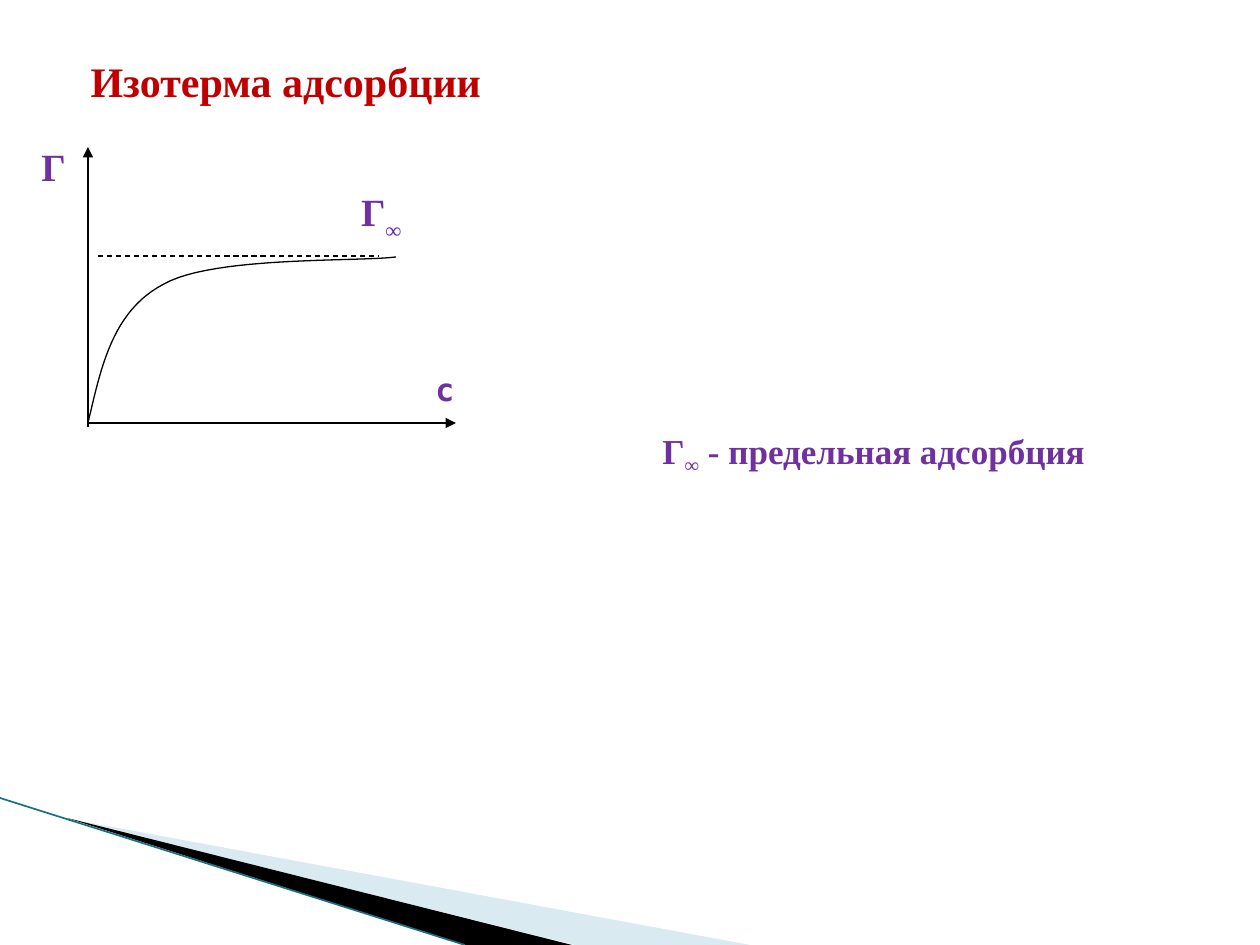
"""Build a slide showing an adsorption isotherm and its limiting value."""
import pptx
import pptx.dml.color
import pptx.enum.dml
import pptx.enum.shapes
import pptx.enum.text
import pptx.oxml.ns
import pptx.util
from lxml import etree

THEME = {
    "title": "C00000", "label": "7030A0", "ink": "000000",
    "pale": "A0CBDC", "edge": "1A6F80",
    "serif": "Times New Roman", "mono": "DejaVu Sans Mono",
    "title_pt": 24, "axis_pt": 22, "legend_pt": 20, "c_pt": 18,
    "line_pt": 0.75, "edge_pt": 0.95,
}
SLIDE = (1260, 945)
TITLE = ("Изотерма адсорбции", (78, 49, 420, 63))
LABELS = [
    ([("Г", 0), ("∞ ", -30)], (335, 186, 98, 59),
     dict(size="axis_pt", align="CENTER", anchor="MIDDLE", wrap=True)),
    ([("Г", 0)], (29, 137, 50, 59), dict(size="axis_pt", anchor="MIDDLE")),
    ([("с", 0)], (423, 364, 52, 50), dict(size="c_pt", font="mono")),
    ([("Г", 0), ("∞", -25), (" - предельная адсорбция", 0)],
     (650, 423, 457, 55), dict(size="legend_pt")),
]
WEDGES = [
    ([(69, 819), (750, 945), (575, 945)], "pale", 40),
    ([(67, 818), (572, 945), (465, 945)], "ink", 100),
]
EDGE = (0, 798, 465, 945)
AXES = [(88, 427, 88, 147), (88, 423, 456, 423)]
LIMIT = (98, 256, 379, 256)
CURVE = [
    [(88, 423), (101, 368), (112, 311), (164, 284)],
    [(164, 284), (214, 256), (357, 262), (396, 257)],
]
STEPS = 24


def px(n):
    return round(n * 914400 / 126)


def rgb(name):
    return pptx.dml.color.RGBColor.from_string(THEME[name])


def add_xml(parent, tag, **attrs):
    return etree.SubElement(parent, pptx.oxml.ns.qn(tag), attrs)


def place(sp, box):
    sp.left, sp.top, sp.width, sp.height = map(px, box)


def write(sp, runs, size, color="label", font="serif", align="LEFT", anchor="TOP", wrap=False):
    tf = sp.text_frame
    tf.word_wrap = wrap
    tf.auto_size = pptx.enum.text.MSO_AUTO_SIZE.NONE
    tf.vertical_anchor = getattr(pptx.enum.text.MSO_ANCHOR, anchor)
    p = tf.paragraphs[0]
    p.alignment = getattr(pptx.enum.text.PP_ALIGN, align)
    for text, baseline in runs:
        r = p.add_run()
        r.text = text
        r.font.name = THEME[font]
        r.font.size = pptx.util.Pt(THEME[size])
        r.font.bold = True
        r.font.color.rgb = rgb(color)
        if baseline:
            r.font._element.set("baseline", str(baseline * 1000))


def add_line(s, ends, color="ink", width="line_pt", arrow=False, dash=False):
    line = s.shapes.add_connector(pptx.enum.shapes.MSO_CONNECTOR.STRAIGHT, *map(px, ends))
    line.line.color.rgb = rgb(color)
    line.line.width = pptx.util.Pt(THEME[width])
    if dash:
        line.line.dash_style = pptx.enum.dml.MSO_LINE.DASH
    if arrow:
        add_xml(line.line._get_or_add_ln(), "a:tailEnd", type="triangle")
    add_xml(line._element.spPr, "a:effectLst")


def add_outline(s, points, close):
    start, *rest = [(px(x), px(y)) for x, y in points]
    builder = s.shapes.build_freeform(*start)
    builder.add_line_segments(rest, close=close)
    sp = builder.convert_to_shape()
    sp.shadow.inherit = False
    return sp


def add_wedge(s, points, color, opacity):
    sp = add_outline(s, points, True)
    sp.fill.solid()
    sp.fill.fore_color.rgb = rgb(color)
    sp.line.fill.background()
    if opacity < 100:
        clr = sp._element.spPr.find(".//" + pptx.oxml.ns.qn("a:srgbClr"))
        add_xml(clr, "a:alpha", val=str(opacity * 1000))


def bezier(controls, t):
    weights = ((1 - t) ** 3, 3 * t * (1 - t) ** 2, 3 * t * t * (1 - t), t ** 3)
    return tuple(sum(w * c for w, c in zip(weights, axis)) for axis in zip(*controls))


def add_curve(s):
    points = [CURVE[0][0]]
    points += [bezier(part, i / STEPS) for part in CURVE for i in range(1, STEPS + 1)]
    sp = add_outline(s, points, False)
    sp.fill.background()
    sp.line.color.rgb = rgb("ink")
    sp.line.width = pptx.util.Pt(THEME["line_pt"])


def main():
    prs = pptx.Presentation()
    prs.slide_width, prs.slide_height = map(px, SLIDE)
    s = prs.slides.add_slide(prs.slide_layouts[5])
    for wedge in WEDGES:
        add_wedge(s, *wedge)
    add_line(s, EDGE, color="edge", width="edge_pt")
    text, box = TITLE
    place(s.shapes.title, box)
    write(s.shapes.title, [(text, 0)], "title_pt", color="title")
    for axis in AXES:
        add_line(s, axis, arrow=True)
    add_curve(s)
    add_line(s, LIMIT, dash=True)
    for runs, box, style in LABELS:
        write(s.shapes.add_textbox(*map(px, box)), runs, **style)
    prs.save("out.pptx")


if __name__ == "__main__":
    main()
